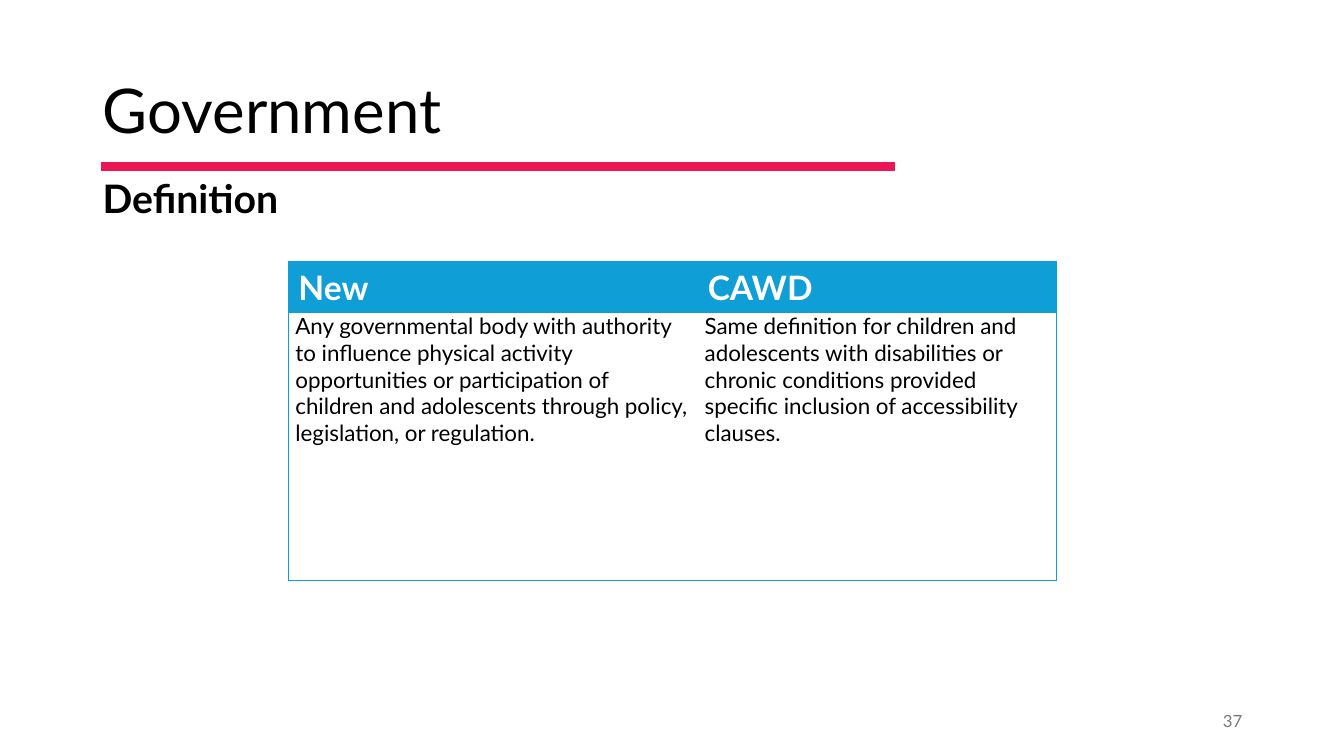
import pptx
import pptx.util
import pptx.dml.color
import pptx.enum.shapes
import pptx.enum.text
from dataclasses import dataclass
from lxml import etree
from pptx.oxml.ns import qn

Inches, Pt = pptx.util.Inches, pptx.util.Pt
ALIGN, ANCHOR = pptx.enum.text.PP_ALIGN, pptx.enum.text.MSO_ANCHOR
WIDTH, HEIGHT = 13.33, 7.5


@dataclass(frozen=True)
class Theme:
    font: str = "Lato"
    ink: str = "000000"
    paper: str = "FFFFFF"
    accent: str = "EA1656"
    table: str = "0F9ED5"
    muted: str = "797979"
    title: int = 44
    subtitle: int = 28
    header: int = 24
    body: int = 16
    number: int = 12


THEME = Theme()
LEFT = 0.92 / WIDTH
COLUMNS = (4.06, 3.56)
ROWS = (0.47, 2.66)
HEADERS = ("New", "CAWD")
DEFINITIONS = (
    ("Any governmental body with authority to influence physical activity "
     "opportunities or participation of children and adolescents through "
     "policy, legislation, or regulation.",),
    ("Same definition for children and adolescents with disabilities or",
     "chronic conditions provided specific inclusion of accessibility clauses."),
)


def rgb(value):
    return pptx.dml.color.RGBColor.from_string(value)


def place(x, y, w, h):
    """Turn shares of the slide into lengths."""
    return (Inches(x * WIDTH), Inches(y * HEIGHT),
            Inches(w * WIDTH), Inches(h * HEIGHT))


def write(tf, lines, size, color, bold=False, align=ALIGN.LEFT):
    tf.word_wrap = True
    for i, line in enumerate(lines):
        p = tf.paragraphs[0] if i == 0 else tf.add_paragraph()
        p.text = line
        p.alignment = align
        p.font.name, p.font.size, p.font.bold = THEME.font, Pt(size), bold
        p.font.color.rgb = rgb(color)


def add_title(s, text):
    sp = s.shapes.title
    sp.left, sp.top, sp.width, sp.height = place(LEFT, 0.4 / HEIGHT, 11.5 / WIDTH, 1.45 / HEIGHT)
    tf = sp.text_frame
    write(tf, [text], THEME.title, THEME.ink)
    tf.auto_size = pptx.enum.text.MSO_AUTO_SIZE.NONE
    tf.vertical_anchor = ANCHOR.MIDDLE
    tf.paragraphs[0].line_spacing = 0.9


def add_label(s, box, text, size, color, anchor=ANCHOR.TOP, **style):
    tf = s.shapes.add_textbox(*place(*box)).text_frame
    tf.vertical_anchor = anchor
    write(tf, [text], size, color, **style)


def add_rule(s, x1, x2, y):
    x, y, w, _ = place(x1, y, x2 - x1, 0)
    line = s.shapes.add_connector(pptx.enum.shapes.MSO_CONNECTOR.STRAIGHT, x, y, x + w, y)
    line.line.color.rgb = rgb(THEME.accent)
    line.line.width = Pt(6)
    etree.SubElement(line._element.spPr, qn("a:effectLst"))


def set_borders(cell, sides):
    """Draw the named sides and clear the others; borders precede the fill."""
    tcPr = cell._tc.get_or_add_tcPr()
    for i, side in enumerate("LRTB"):
        ln = etree.Element(qn("a:ln" + side), w=str(Pt(1)))
        if side in sides:
            fill = etree.SubElement(ln, qn("a:solidFill"))
            etree.SubElement(fill, qn("a:srgbClr"), val=THEME.table)
        else:
            etree.SubElement(ln, qn("a:noFill"))
        tcPr.insert(i, ln)


def fill_cell(cell, lines, size, color, fill, sides, bold=False):
    cell.fill.solid()
    cell.fill.fore_color.rgb = rgb(fill)
    write(cell.text_frame, lines, size, color, bold)
    set_borders(cell, sides)


def add_definitions(s, x, y):
    box = place(x, y, sum(COLUMNS) / WIDTH, sum(ROWS) / HEIGHT)
    table = s.shapes.add_table(len(ROWS), len(COLUMNS), *box).table
    table.horz_banding = False
    for row, height in zip(table.rows, ROWS):
        row.height = Inches(height)
    for c, width in enumerate(COLUMNS):
        table.columns[c].width = Inches(width)
        outer = "LR"[c]
        # Header
        fill_cell(table.cell(0, c), [HEADERS[c]], THEME.header, THEME.paper,
                  THEME.table, outer + "TB", bold=True)
        # Definition
        cell = table.cell(1, c)
        fill_cell(cell, DEFINITIONS[c], THEME.body, THEME.ink, THEME.paper, outer + "TB")
        cell.margin_left = cell.margin_right = Inches(0.07)
        cell.margin_top = cell.margin_bottom = 0


def main():
    prs = pptx.Presentation()
    prs.slide_width, prs.slide_height = Inches(WIDTH), Inches(HEIGHT)
    s = prs.slides.add_slide(prs.slide_layouts[5])

    # Heading
    add_title(s, "Government")
    add_rule(s, 1 / WIDTH, 8.88 / WIDTH, 1.65 / HEIGHT)
    add_label(s, (LEFT, 1.68 / HEIGHT, 2.81 / WIDTH, 0.57 / HEIGHT),
              "Definition", THEME.subtitle, THEME.ink, bold=True)

    # Definitions table
    add_definitions(s, 2.86 / WIDTH, 2.6 / HEIGHT)

    # Slide number
    add_label(s, (9.42 / WIDTH, 6.95 / HEIGHT, 3 / WIDTH, 0.4 / HEIGHT), "37",
              THEME.number, THEME.muted, anchor=ANCHOR.MIDDLE, align=ALIGN.RIGHT)
    prs.save("out.pptx")


if __name__ == "__main__":
    main()
